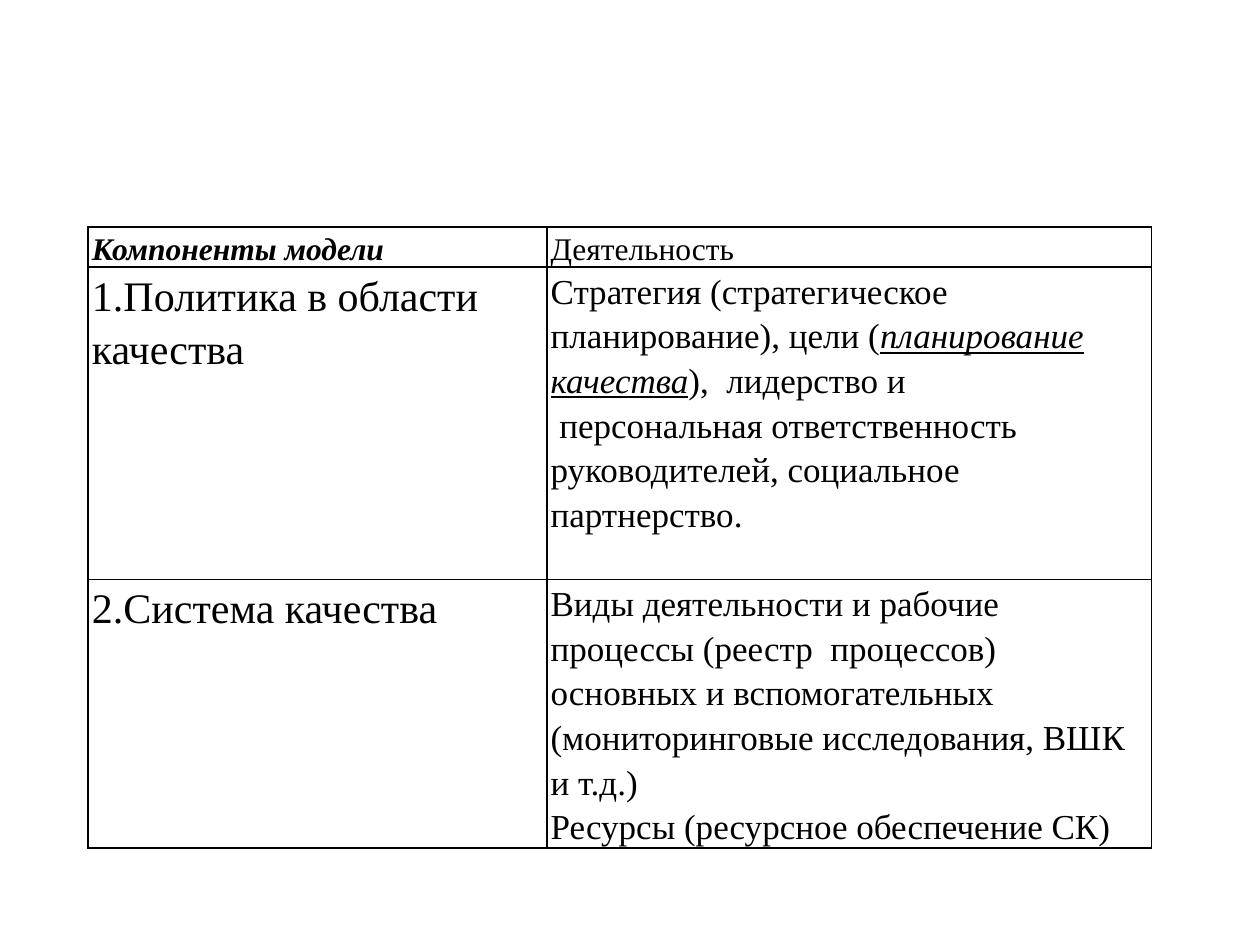
from lxml.etree import SubElement
from pptx import Presentation
from pptx.dml.color import RGBColor
from pptx.oxml.ns import qn
from pptx.util import Inches, Pt

BLACK = RGBColor(0x00, 0x00, 0x00)
FONT = "Times New Roman"
BORDER_WIDTH = Pt(1)
COLUMN_WIDTHS = (3.64, 4.8)
ROW_HEIGHTS = (0.32, 2.48, 2.13)
HEADING_SIZE, COMPONENT_SIZE, ACTIVITY_SIZE = 18, 24, 20

HEADINGS = ("Компоненты модели", "Деятельность")
COMPONENTS = (
    ("1.Политика в области качества", (
        (("Стратегия (стратегическое планирование), цели (", False),
         ("планирование качества", True),
         ("),  лидерство и", False)),
        ((" персональная ответственность руководителей, социальное партнерство.", False),),
    )),
    ("2.Система качества", (
        (("Виды деятельности и рабочие процессы (реестр  процессов) основных "
          "и вспомогательных (мониторинговые исследования, ВШК и т.д.)", False),),
        (("Ресурсы (ресурсное обеспечение СК)", False),),
    )),
)


def draw_borders(cell):
    properties = cell._tc.get_or_add_tcPr()
    for side in ("a:lnL", "a:lnR", "a:lnT", "a:lnB"):
        border = SubElement(properties, qn(side), w=str(BORDER_WIDTH))
        solid = SubElement(border, qn("a:solidFill"))
        SubElement(solid, qn("a:srgbClr"), val=str(BLACK))


def fill_cell(cell, paragraphs, size, heading=False):
    cell.margin_left = cell.margin_right = Inches(0.03)
    cell.margin_top = cell.margin_bottom = 0
    draw_borders(cell)
    cell.fill.background()
    frame = cell.text_frame
    for index, parts in enumerate(paragraphs):
        paragraph = frame.add_paragraph() if index else frame.paragraphs[0]
        paragraph.line_spacing = 1.15
        font = paragraph.font
        font.name, font.size = FONT, Pt(size)
        font.bold = font.italic = heading
        font.color.rgb = BLACK
        for text, emphasised in parts:
            run = paragraph.add_run()
            run.text = text
            if emphasised:
                run.font.italic = run.font.underline = True


def add_model_table(slide):
    table = slide.shapes.add_table(
        len(ROW_HEIGHTS), len(COLUMN_WIDTHS), Inches(0.7), Inches(1.8),
        Inches(sum(COLUMN_WIDTHS)), Inches(sum(ROW_HEIGHTS))).table
    table.first_row = table.horz_banding = False
    for column, width in zip(table.columns, COLUMN_WIDTHS):
        column.width = Inches(width)
    for row, height in zip(table.rows, ROW_HEIGHTS):
        row.height = Inches(height)
    return table


def main():
    presentation = Presentation()
    presentation.slide_width, presentation.slide_height = Inches(10), Inches(7.5)
    slide = presentation.slides.add_slide(presentation.slide_layouts[6])
    table = add_model_table(slide)
    for column, heading in enumerate(HEADINGS):
        fill_cell(table.cell(0, column), [[(heading, False)]], HEADING_SIZE, heading=column == 0)
    for row, (component, activities) in enumerate(COMPONENTS, start=1):
        fill_cell(table.cell(row, 0), [[(component, False)]], COMPONENT_SIZE)
        fill_cell(table.cell(row, 1), activities, ACTIVITY_SIZE)
    presentation.save("out.pptx")


if __name__ == "__main__":
    main()
